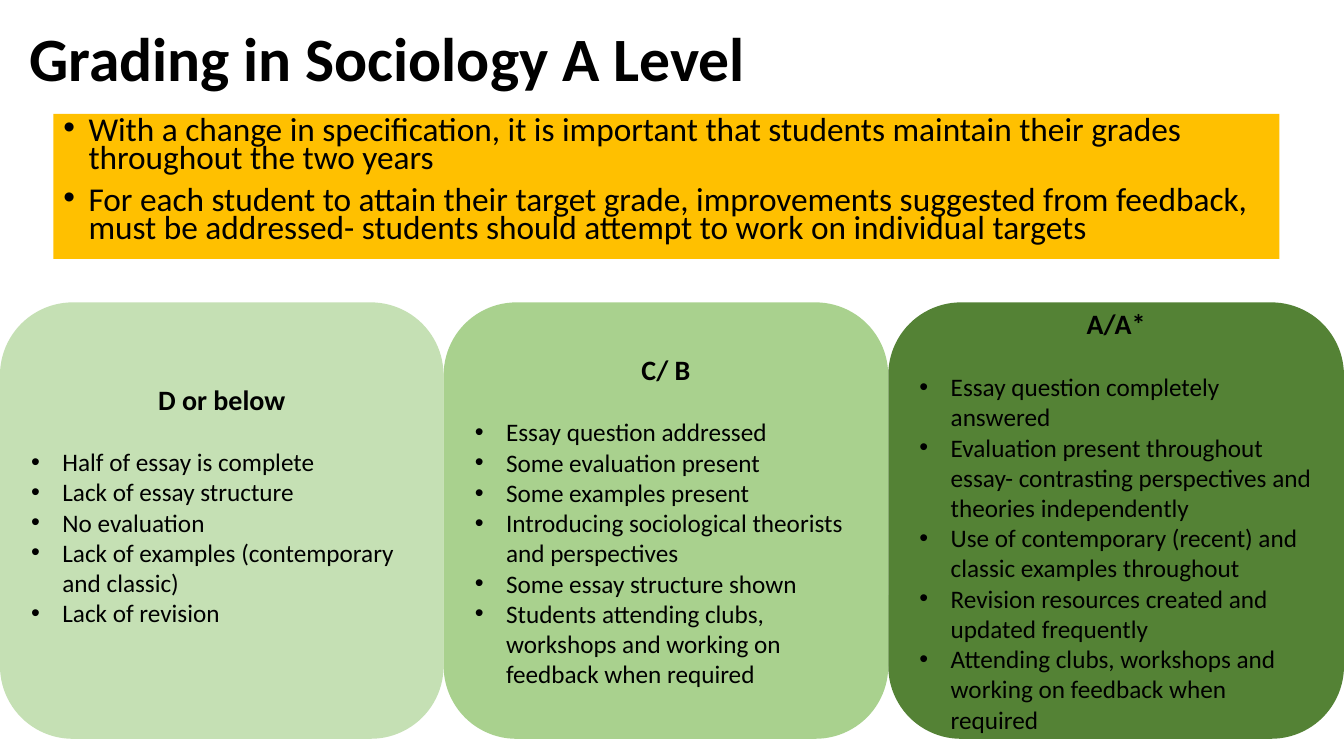
from pptx import Presentation
from pptx import util as u
from pptx.dml.color import RGBColor
from pptx.enum import shapes, text
from pptx.oxml.ns import qn
from lxml import etree

PX = 9144  # EMU per px, 100 px to the inch
FONT = "Calibri"
BLACK = "000000"

INTRO = [
    "With a change in specification, it is important that students maintain "
    "their grades throughout the two years",
    "For each student to attain their target grade, improvements suggested "
    "from feedback, must be addressed- students should attempt to work on "
    "individual targets",
]

# heading, fill, width, extra space under the text, points
GRADES = [
    ("D or below", "C5E0B4", 440, 31, [
        "Half of essay is complete",
        "Lack of essay structure",
        "No evaluation",
        "Lack of examples (contemporary and classic)",
        "Lack of revision",
    ]),
    ("C/ B", "A9D18E", 441, 0, [
        "Essay question addressed",
        "Some evaluation present",
        "Some examples present",
        "Introducing sociological theorists and perspectives",
        "Some essay structure shown",
        "Students attending clubs, workshops and working on feedback when required",
    ]),
    ("A/A*", "548235", 452, 0, [
        "Essay question completely answered",
        "Evaluation present throughout essay- contrasting perspectives and "
        "theories independently",
        "Use of contemporary (recent) and classic examples throughout",
        "Revision resources created and updated frequently",
        "Attending clubs, workshops and working on feedback when required",
    ]),
]


def px(n):
    return u.Emu(n * PX)


def rgb(colour):
    return RGBColor.from_string(colour)


def add_run(p, words, size, bold=False):
    r = p.add_run()
    r.text = words
    r.font.name = FONT
    r.font.size = u.Pt(size)
    r.font.bold = bold
    r.font.color.rgb = rgb(BLACK)


def next_paragraph(tf):
    p = tf.paragraphs[0]
    return tf.add_paragraph() if p.runs else p


def add_bullet(tf, words, size, indent):
    p = next_paragraph(tf)
    p.alignment = text.PP_ALIGN.LEFT
    pPr = p._p.get_or_add_pPr()
    pPr.set("marL", str(px(indent)))
    pPr.set("indent", str(-px(indent)))
    etree.SubElement(pPr, qn("a:buFont")).set("typeface", "Arial")
    etree.SubElement(pPr, qn("a:buChar")).set("char", "•")
    add_run(p, words, size)
    return p


def add_panel(s, kind, fill, box, anchor):
    sp = s.shapes.add_shape(kind, *map(px, box))
    sp.shadow.inherit = False
    sp.fill.solid()
    sp.fill.fore_color.rgb = rgb(fill)
    sp.line.fill.background()
    tf = sp.text_frame
    tf.word_wrap = True
    tf.vertical_anchor = anchor
    return tf


def set_title(s, words, box):
    title = s.shapes.title
    title.left, title.top, title.width, title.height = map(px, box)
    tf = title.text_frame
    tf.word_wrap = True
    tf.auto_size = text.MSO_AUTO_SIZE.NONE
    tf.vertical_anchor = text.MSO_ANCHOR.MIDDLE
    p = tf.paragraphs[0]
    p.alignment = text.PP_ALIGN.LEFT
    p.line_spacing = 0.9
    add_run(p, words, 44, bold=True)


def add_intro(s, box):
    tf = add_panel(s, shapes.MSO_SHAPE.RECTANGLE, "FFC000", box,
                   text.MSO_ANCHOR.TOP)
    for words in INTRO:
        p = add_bullet(tf, words, 23.8, 25)
        p.line_spacing = 0.7
        p.space_before = u.Pt(10)


def add_grade(s, box, heading, fill, space_under, points):
    tf = add_panel(s, shapes.MSO_SHAPE.ROUNDED_RECTANGLE, fill, box,
                   text.MSO_ANCHOR.MIDDLE)
    tf.margin_bottom = px(5 + space_under)
    p = next_paragraph(tf)
    p.alignment = text.PP_ALIGN.CENTER
    p.space_after = u.Pt(22)
    add_run(p, heading, 20, bold=True)
    for words in points:
        add_bullet(tf, words, 18, 31)


def add_grades(s, left, top, height):
    for heading, fill, width, space_under, points in GRADES:
        add_grade(s, (left, top, width, height), heading, fill, space_under, points)
        left += width


def main():
    prs = Presentation()
    prs.slide_width, prs.slide_height = px(1333), px(750)
    s = prs.slides.add_slide(prs.slide_layouts[5])  # title only
    set_title(s, "Grading in Sociology A Level", (19, 9, 1229, 104))
    add_intro(s, (53, 113, 1216, 144))
    add_grades(s, 0, 300, 433)
    prs.save("out.pptx")


if __name__ == "__main__":
    main()
